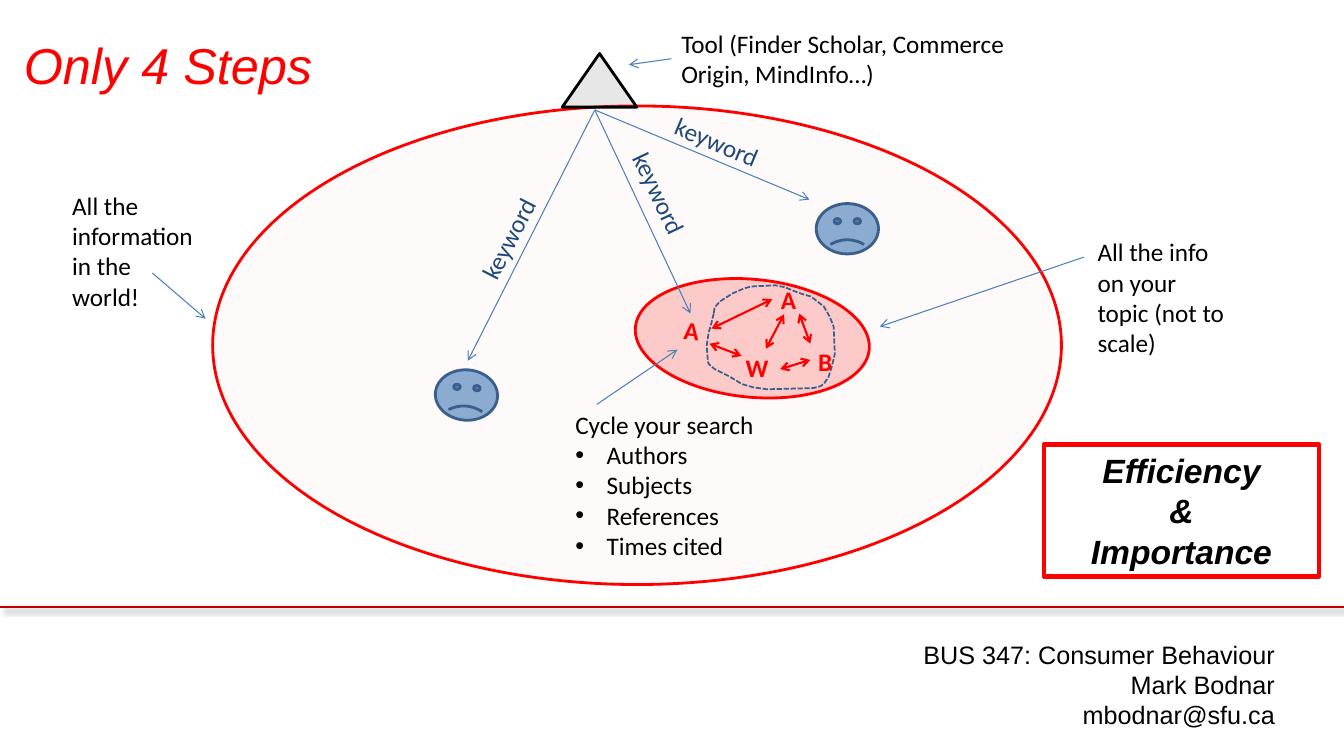
from lxml import etree
from pptx import Presentation
from pptx.dml.color import RGBColor
from pptx.enum.dml import MSO_LINE
from pptx.enum.shapes import MSO_CONNECTOR, MSO_SHAPE
from pptx.enum.text import PP_ALIGN
from pptx.oxml.ns import qn
from pptx.util import Cm, Pt

LEFT, CENTER, RIGHT = PP_ALIGN.LEFT, PP_ALIGN.CENTER, PP_ALIGN.RIGHT
STRAIGHT = MSO_CONNECTOR.STRAIGHT
OVAL, BLOCK = MSO_SHAPE.OVAL, MSO_SHAPE.RECTANGLE
PEAK, FACE = MSO_SHAPE.ISOSCELES_TRIANGLE, MSO_SHAPE.SMILEY_FACE
DASH = MSO_LINE.SQUARE_DOT

RED, BLACK, BLUE, NAVY = "FF0000", "000000", "4B7EBC", "3A5F8C"

RING = [
    (0.18, 0.71), (0.1, 1.02), (0.05, 1.19), (0, 1.52), (0.03, 1.91),
    (0.05, 1.98), (0.2, 2.11), (0.3, 2.16), (0.56, 2.29), (0.81, 2.44),
    (0.89, 2.49), (1.17, 2.57), (1.52, 2.62), (2.69, 2.59), (2.87, 2.54),
    (2.95, 2.49), (3.07, 2.31), (3.15, 2.06), (3.23, 1.73), (3.2, 1.04),
    (3.1, 0.79), (2.95, 0.53), (2.69, 0.33), (2.62, 0.28), (2.44, 0.23),
    (2.16, 0.13), (1.98, 0.05), (1.73, 0), (1.12, 0.03), (0.94, 0.08),
    (0.66, 0.2), (0.33, 0.41), (0.2, 0.56),
]


def color(code):
    return RGBColor.from_string(code)


def node(parent, tag, **attrs):
    child = etree.SubElement(parent, qn(tag))
    for key, value in attrs.items():
        child.set(key, str(value))
    return child


def write(frame, lines, size=18, font="Calibri", ink=BLACK, bold=False,
          slant=False, align=LEFT, inset=0.25, bullets=False):
    """Fill a text frame; with bullets, every line after the first gets one."""
    frame.word_wrap = True
    frame.margin_left = Cm(inset)
    for index, line in enumerate(lines):
        para = frame.add_paragraph() if index else frame.paragraphs[0]
        para.alignment = align
        if bullets and index:
            props = para._p.get_or_add_pPr()
            props.set("marL", str(Cm(0.79)))
            props.set("indent", str(-Cm(0.79)))
            node(props, "a:buFont", typeface="Arial")
            node(props, "a:buChar", char="•")
        run = para.add_run()
        run.text = line
        run.font.size, run.font.name = Pt(size), font
        run.font.bold, run.font.italic = bold, slant
        run.font.color.rgb = color(ink)


def label(slide, box, *lines, turn=0, **style):
    item = slide.shapes.add_textbox(*map(Cm, box))
    item.rotation = turn
    write(item.text_frame, lines, **style)
    return item


def paint(item, edge, width, fill=None, alpha=100):
    item.shadow.inherit = False
    item.line.color.rgb = color(edge)
    item.line.width = Pt(width)
    if fill is None:
        item.fill.background()
        return
    item.fill.solid()
    item.fill.fore_color.rgb = color(fill)
    tone = item._element.spPr.find(qn("a:solidFill")).find(qn("a:srgbClr"))
    node(tone, "a:alpha", val=alpha * 1000)


def draw(slide, kind, box, edge, width=2, fill=None, alpha=100, turn=0):
    item = slide.shapes.add_shape(kind, *map(Cm, box))
    item.rotation = turn
    paint(item, edge, width, fill, alpha)
    return item


def link(slide, start, end, ink=BLUE, width=0.75, heads=("tailEnd",)):
    """Draw a line and return it with its effect list."""
    item = slide.shapes.add_connector(STRAIGHT, *map(Cm, (*start, *end)))
    item.line.color.rgb = color(ink)
    item.line.width = Pt(width)
    for head in heads:
        node(item.line._get_or_add_ln(), f"a:{head}", type="arrow")
    return item, node(item._element.spPr, "a:effectLst")


def frame(slide, box):
    """Place the title, footer rule and course details."""
    x, y, w, h = box
    low = y + 15.29
    _, effects = link(slide, (x + w, low), (x, low), "C00000", 1.5, ())
    shade = node(effects, "a:outerShdw", blurRad=Pt(4), dist=Pt(3),
                 dir=45 * 60000, algn="tl", rotWithShape=0)
    node(node(shade, "a:srgbClr", val=BLACK), "a:alpha", val=40000)
    label(slide, (x, y + 0.74, 29.67, 1.8), "Only 4 Steps", size=36,
          font="Arial", ink=RED, slant=True, inset=0.6)
    label(slide, (x + 18.49, low + 0.69, 13.89, 2.57),
          "BUS 347: Consumer Behaviour", "Mark Bodnar", "mbodnar@sfu.ca",
          font="Arial", align=RIGHT)


def world(slide, box):
    x, y, w, h = box
    draw(slide, OVAL, (x + 3.79, y, w - 3.79, h), RED, fill="E6B9B8", alpha=7)
    link(slide, (x + 2.27, y + 4.21), (x + 3.61, y + 5.36))
    label(slide, (x, y + 2, 3.61, 3.33), "All the information in the world!")


def tool(slide, box):
    x, y, w, h = box
    draw(slide, PEAK, (x, y + 0.77, 1.88, h - 0.77), BLACK,
         fill="808080", alpha=19)
    note = label(slide, (x + 2.75, y, w - 2.75, 1.8),
                 "Tool (Finder Scholar, Commerce Origin, MindInfo…)")
    arrow, _ = link(slide, (x + 2.75, y + 0.9), (x + 1.68, y + 1.05))
    arrow.begin_connect(note, 1)


def topic(slide, box):
    x, y, w, h = box
    draw(slide, OVAL, (x, y + 1.2, 5.92, h - 1.2), RED,
         fill=RED, alpha=19, turn=5.5)
    link(slide, (x + 11.31, y + 0.64), (x + 6.17, y + 2.39))
    label(slide, (x + 11.41, y, w - 11.41, 2.57),
          "All the info on your topic (not to scale)")


def search(slide, box):
    """Draw the three keyword rays and the two missed targets."""
    x, y, w, h = box
    rays = [((0.82, 6.35), (0.43, 2.67), 297.2),
            ((9.43, 2.29), (5.74, 0.36), 22.7),
            ((6.43, 5.16), (4.24, 1.71), 64.6)]
    for (end, drop), (left, top), turn in rays:
        link(slide, (x + 4.02, y + 0.03), (x + end, y + drop))
        label(slide, (x + left, y + top, 2.9, 1.02), "keyword",
              ink="1F497D", turn=turn)
    for left, top, turn in [(0, h - 1.27, 3.8), (w - 1.57, 2.39, 0)]:
        face = draw(slide, FACE, (x + left, y + top, 1.57, 1.27), NAVY,
                    fill="4F81BD", alpha=65, turn=turn)
        face.adjustments[0] = -0.047


def cycle(slide, box):
    """Draw the linked results and the list of ways to move between them."""
    x, y, w, h = box
    spots = [(Cm(x + 3.56 + a), Cm(y + 0.15 + b)) for a, b in RING]
    path = slide.shapes.build_freeform(*spots[0])
    path.add_line_segments(spots[1:], close=True)
    ring = path.convert_to_shape()
    paint(ring, NAVY, 1.25)
    ring.line.dash_style = DASH
    marks = [("A", 2.74, 0.78, 5.5), ("A", 5.18, 0, 0),
             ("B", 6.12, 1.55, 0), ("W", 4.29, 1.72, 0)]
    for mark, left, top, turn in marks:
        label(slide, (x + left, y + top, 0.76, 1.02), mark,
              ink=RED, bold=True, turn=turn)
    hops = [(3.68, 1.24, 5.21, 0.5), (5.89, 0.86, 6.17, 1.62),
            (6.17, 2.03, 5.41, 2.26), (5.05, 1.75, 5.51, 0.88),
            (4.44, 1.93, 3.63, 1.62)]
    for a, b, c, d in hops:
        link(slide, (x + a, y + b), (x + c, y + d), RED, 1.5,
             ("headEnd", "tailEnd"))
    link(slide, (x + 0.79, y + 3.15), (x + 2.82, y + 1.77))
    label(slide, (x, y + 3.15, 5.51, h - 3.15), "Cycle your search",
          "Authors", "Subjects", "References", "Times cited", bullets=True)


def goal(slide, box):
    item = draw(slide, BLOCK, box, RED, 3)
    write(item.text_frame, ["Efficiency", "&", "Importance"], size=24,
          font="Arial", bold=True, slant=True, align=CENTER)


def main():
    deck = Presentation()
    deck.slide_width, deck.slide_height = Cm(33.87), Cm(19.05)
    slide = deck.slides.add_slide(deck.slide_layouts[6])
    frame(slide, (0, 0, 33.87, 19.05))
    world(slide, (1.57, 2.67, 25.18, 12.06))
    tool(slide, (14.17, 0.58, 12.83, 2.12))
    topic(slide, (16, 5.84, 15.22, 4.17))
    search(slide, (10.97, 2.74, 11.17, 7.85))
    cycle(slide, (14.25, 7.04, 7, 7.26))
    goal(slide, (26.31, 11.2, 6.93, 3.33))
    deck.save("out.pptx")


if __name__ == "__main__":
    main()
